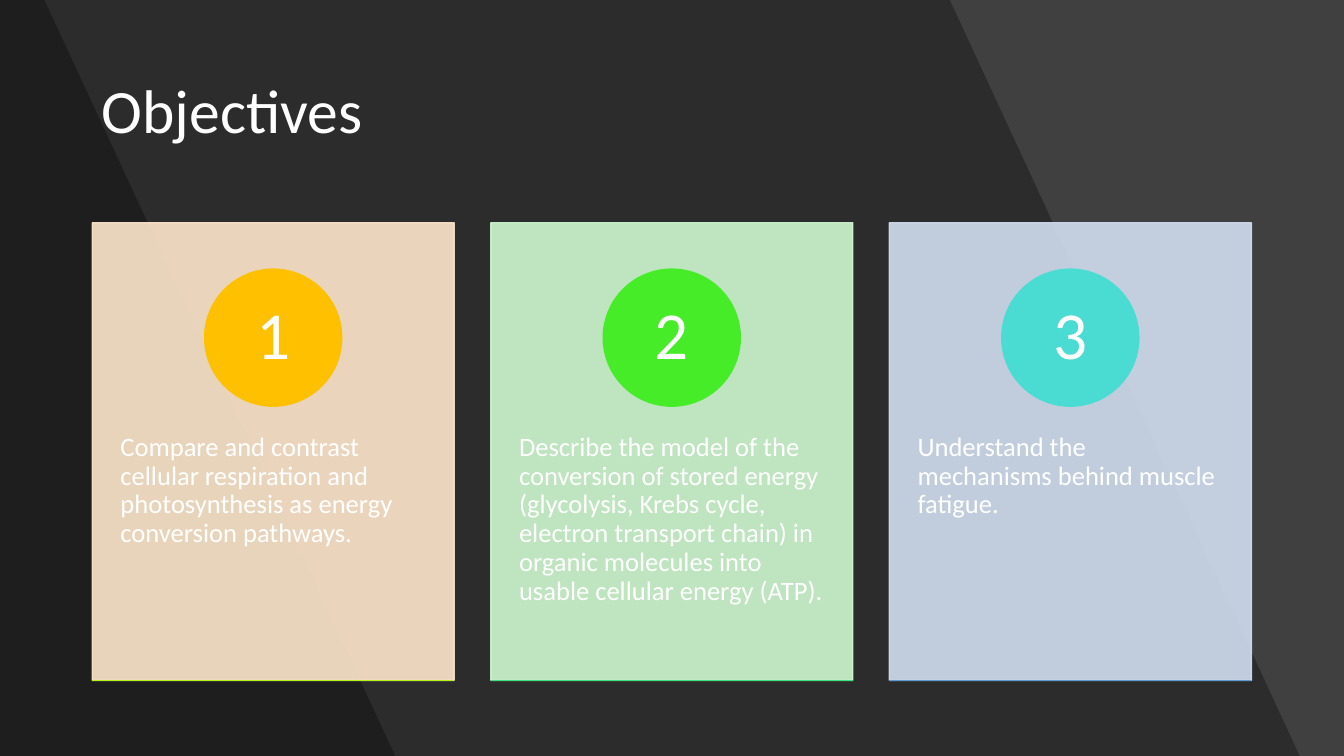
"""Build the Objectives slide: three numbered cards on a dark slanted backdrop."""
from lxml.etree import SubElement
from pptx import Presentation
from pptx.dml.color import RGBColor
from pptx.enum.shapes import MSO_CONNECTOR as Connector, MSO_SHAPE as Shape
from pptx.enum.text import MSO_ANCHOR as Anchor, PP_ALIGN as Align
from pptx.oxml.ns import qn
from pptx.util import Inches, Pt

WHITE = RGBColor(0xFF, 0xFF, 0xFF)
BLACK = RGBColor(0x00, 0x00, 0x00)
GREY = RGBColor(0x40, 0x40, 0x40)
SAND = RGBColor(0xFF, 0xE8, 0xCC)
MINT = RGBColor(0xCF, 0xF8, 0xD1)
MIST = RGBColor(0xD2, 0xDF, 0xF0)
AMBER = RGBColor(0xFF, 0xC0, 0x00)
GREEN = RGBColor(0x46, 0xEC, 0x27)
TURQUOISE = RGBColor(0x4A, 0xDC, 0xD2)
LIME = RGBColor(0xB2, 0xF5, 0x14)
EMERALD = RGBColor(0x39, 0xE3, 0x7B)
BLUE = RGBColor(0x5B, 0x9B, 0xD5)

FONT = "Calibri"
TITLE = "Objectives"
OBJECTIVES = [
    ("Compare and contrast cellular respiration and photosynthesis as energy "
     "conversion pathways.", SAND, AMBER, LIME),
    ("Describe the model of the conversion of stored energy (glycolysis, Krebs "
     "cycle, electron transport chain) in organic molecules into usable "
     "cellular energy (ATP).", MINT, GREEN, EMERALD),
    ("Understand the mechanisms behind muscle fatigue.", MIST, TURQUOISE, BLUE),
]
SLANTS = [(9.42, 12.89), (0.44, 3.92)]

WIDTH, HEIGHT = 13.33, 7.5
CARD_LEFT, CARD_TOP, CARD_WIDTH, CARD_HEIGHT = 0.915, 2.21, 3.59, 4.54
CARD_STEP = 3.953
CIRCLE_TOP, CIRCLE_SIZE = 2.67, 1.36
TEXT_TOP, TEXT_HEIGHT = 3.94, 2.73


def set_alpha(holder, percent):
    for color in holder.iter(qn("a:srgbClr")):
        SubElement(color, qn("a:alpha"), val=str(percent * 1000))


def paint(shape, color, line_color=None, alpha=None):
    shape.shadow.inherit = False
    shape.fill.solid()
    shape.fill.fore_color.rgb = color
    if line_color is None:
        shape.line.fill.background()
    else:
        shape.line.color.rgb = line_color
        shape.line.width = Pt(1)
    if alpha is not None:
        set_alpha(shape.element.spPr, alpha)


def write(shape, text, size, align, anchor, inset_x, inset_y):
    frame = shape.text_frame
    frame.word_wrap = True
    frame.vertical_anchor = anchor
    frame.margin_left = frame.margin_right = Inches(inset_x)
    frame.margin_top = frame.margin_bottom = Inches(inset_y)
    para = frame.paragraphs[0]
    para.alignment = align
    para.line_spacing = 0.9
    span = para.add_run()
    span.text = text
    span.font.name = FONT
    span.font.size = Pt(size)
    span.font.color.rgb = WHITE


def add_slant(page, top_x, bottom_x):
    builder = page.shapes.build_freeform(0, 0)
    corners = [(top_x, 0), (bottom_x, HEIGHT), (0, HEIGHT)]
    builder.add_line_segments([(Inches(x), Inches(y)) for x, y in corners], close=True)
    paint(builder.convert_to_shape(), BLACK, alpha=30)


def add_card(page, index, text, card_color, circle_color, rule_color):
    left = CARD_LEFT + index * CARD_STEP
    bottom = CARD_TOP + CARD_HEIGHT
    card = page.shapes.add_shape(Shape.RECTANGLE, Inches(left), Inches(CARD_TOP),
                                 Inches(CARD_WIDTH), Inches(CARD_HEIGHT))
    paint(card, card_color, card_color, alpha=90)

    box = page.shapes.add_textbox(Inches(left), Inches(TEXT_TOP),
                                  Inches(CARD_WIDTH), Inches(TEXT_HEIGHT))
    write(box, text, 19, Align.LEFT, Anchor.TOP, 0.28, 0.36)

    circle_left = left + (CARD_WIDTH - CIRCLE_SIZE) / 2
    circle = page.shapes.add_shape(Shape.OVAL, Inches(circle_left), Inches(CIRCLE_TOP),
                                   Inches(CIRCLE_SIZE), Inches(CIRCLE_SIZE))
    paint(circle, circle_color, circle_color)
    write(circle, str(index + 1), 48, Align.CENTER, Anchor.MIDDLE, 0.11, 0.01)

    rule = page.shapes.add_connector(Connector.STRAIGHT, Inches(left), Inches(bottom),
                                     Inches(left + CARD_WIDTH), Inches(bottom))
    rule.line.color.rgb = rule_color
    rule.line.width = Pt(1)
    SubElement(rule.element.spPr, qn("a:effectLst"))


def main():
    deck = Presentation()
    deck.slide_width, deck.slide_height = Inches(WIDTH), Inches(HEIGHT)
    page = deck.slides.add_slide(deck.slide_layouts[5])
    page.background.fill.solid()
    page.background.fill.fore_color.rgb = GREY
    for top_x, bottom_x in SLANTS:
        add_slant(page, top_x, bottom_x)

    title = page.shapes.title
    title.left, title.top = Inches(0.91), Inches(0.4)
    title.width, title.height = Inches(11.51), Inches(1.45)
    write(title, TITLE, 44, Align.LEFT, Anchor.MIDDLE, 0.1, 0.05)
    page.shapes.element.append(title.element)

    for index, objective in enumerate(OBJECTIVES):
        add_card(page, index, *objective)
    deck.save("out.pptx")


if __name__ == "__main__":
    main()
